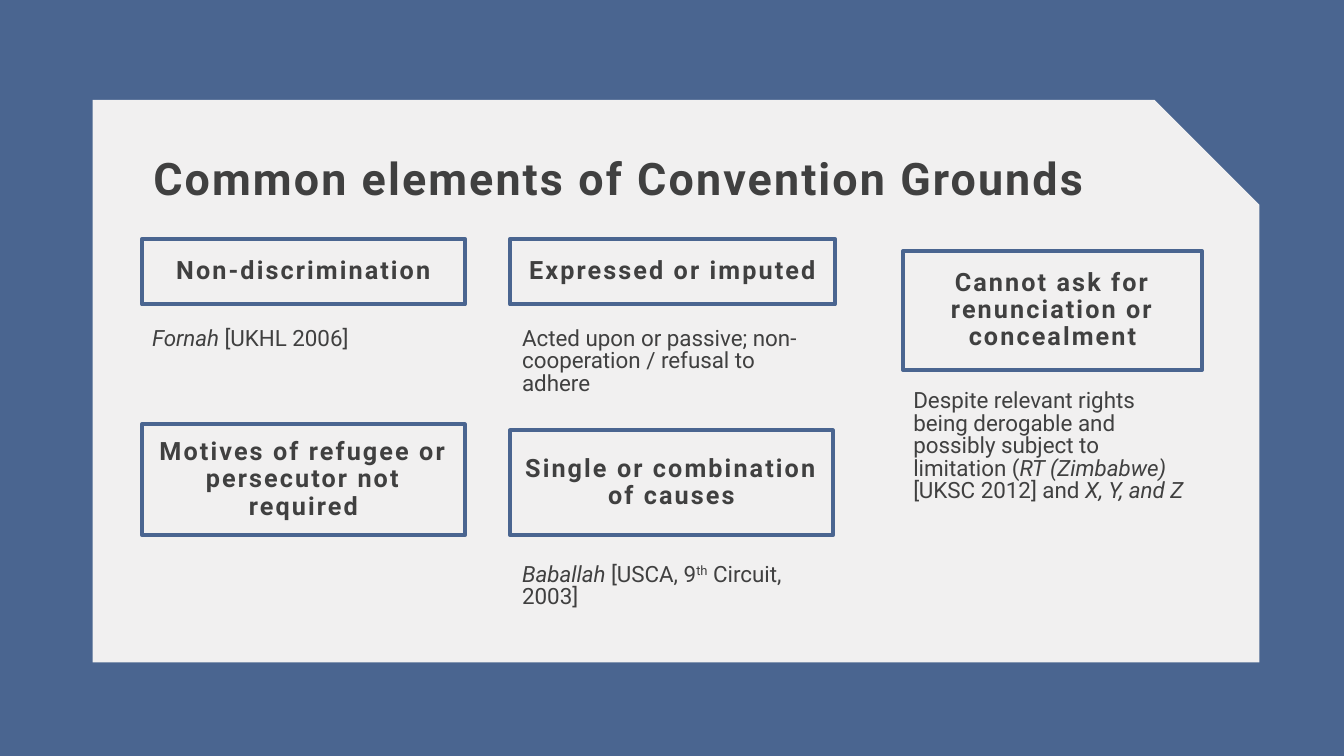
import pptx
import pptx.util
import pptx.dml.color
import pptx.enum.shapes
import pptx.enum.text

Inches, Pt = pptx.util.Inches, pptx.util.Pt
ALIGN, ANCHOR = pptx.enum.text.PP_ALIGN, pptx.enum.text.MSO_ANCHOR
HUES = {"blue": "4A6590", "panel": "F1F0F0", "text": "404040"}
HEADS = [
    ("Non-discrimination", (1.41, 2.37, 3.2, 0.65)),
    ("Expressed or imputed", (5.06, 2.37, 3.22, 0.65)),
    ("Motives of refugee or persecutor not required", (1.41, 4.21, 3.2, 1.1)),
    ("Single or combination of causes", (5.06, 4.27, 3.2, 1.04)),
    ("Cannot ask for renunciation or concealment", (8.96, 2.49, 2.96, 1.18)),
]
NOTES = [
    ([("Fornah ", "i"), ("[UKHL 2006]", "")], (1.41, 3.21, 3.2, 0.81)),
    ([("Acted upon or passive; non-cooperation / refusal to adhere", "")],
     (5.08, 3.21, 3.22, 0.81)),
    ([("Baballah ", "i"), ("[USCA, 9", ""), ("th", "sup"), (" Circuit, 2003]", "")],
     (5.08, 5.55, 3.22, 1.04)),
    ([("Despite relevant rights being derogable and possibly subject to limitation (", ""),
      ("RT (Zimbabwe) ", "i"), ("[UKSC 2012] and ", ""), ("X, Y, and Z", "i")],
     (8.96, 3.83, 2.97, 1.48)),
]


def tint(name):
    """Return the named colour."""
    return pptx.dml.color.RGBColor.from_string(HUES[name])


def write(frame, runs, size, space, align=ALIGN.LEFT, anchor=ANCHOR.TOP, bold=False):
    """Fill a text frame with one paragraph of styled runs."""
    frame.word_wrap = True
    frame.auto_size = pptx.enum.text.MSO_AUTO_SIZE.NONE
    frame.vertical_anchor = anchor
    para = frame.paragraphs[0]
    para.alignment, para.line_spacing, para.space_before = align, space, Pt(0)
    for words, style in runs:
        run = para.add_run()
        run.text = words
        font = run.font
        font.name, font.size, font.bold = "Roboto", Pt(size), bold
        font.italic = style == "i"
        font.color.rgb = tint("text")
        props = run._r.get_or_add_rPr()
        if bold:
            props.set("spc", "150")
        if style == "sup":
            props.set("baseline", "30000")


def panel(slide, box):
    """Draw the light panel with its cut corner behind everything."""
    x, y, w, h = box
    cut = 1.04
    pen = slide.shapes.build_freeform(Inches(x), Inches(y))
    ends = [(x + w - cut, y), (x + w, y + cut), (x + w, y + h), (x, y + h)]
    pen.add_line_segments([(Inches(a), Inches(b)) for a, b in ends], close=True)
    shape = pen.convert_to_shape()
    shape.shadow.inherit = False
    shape.fill.solid()
    shape.fill.fore_color.rgb = tint("panel")
    shape.line.fill.background()
    slide.shapes._spTree.insert(2, shape._element)


def title(slide, words, box):
    """Place and format the slide title."""
    shape = slide.shapes.title
    shape.left, shape.top, shape.width, shape.height = map(Inches, box)
    write(shape.text_frame, [(words, "")], 32, 0.9, bold=True)


def head(slide, words, box):
    """Draw a framed heading."""
    kind = pptx.enum.shapes.MSO_SHAPE.RECTANGLE
    shape = slide.shapes.add_shape(kind, *map(Inches, box))
    shape.shadow.inherit = False
    shape.fill.background()
    shape.line.color.rgb = tint("blue")
    shape.line.width = Pt(3)
    write(shape.text_frame, [(words, "")], 18, 0.9, ALIGN.CENTER, ANCHOR.MIDDLE, True)


def note(slide, runs, box):
    """Place the text below a heading."""
    shape = slide.shapes.add_textbox(*map(Inches, box))
    write(shape.text_frame, runs, 16, Pt(16))


def main():
    """Build and save the slide."""
    deck = pptx.Presentation()
    deck.slide_width, deck.slide_height = Inches(13.33), Inches(7.5)
    slide = deck.slides.add_slide(deck.slide_layouts[5])
    slide.background.fill.solid()
    slide.background.fill.fore_color.rgb = tint("blue")
    panel(slide, (0.92, 0.99, 11.57, 5.58))
    title(slide, "Common elements of Convention Grounds", (1.42, 1.51, 11.21, 1.04))
    for words, box in HEADS:
        head(slide, words, box)
    for runs, box in NOTES:
        note(slide, runs, box)
    deck.save("out.pptx")


if __name__ == "__main__":
    main()
